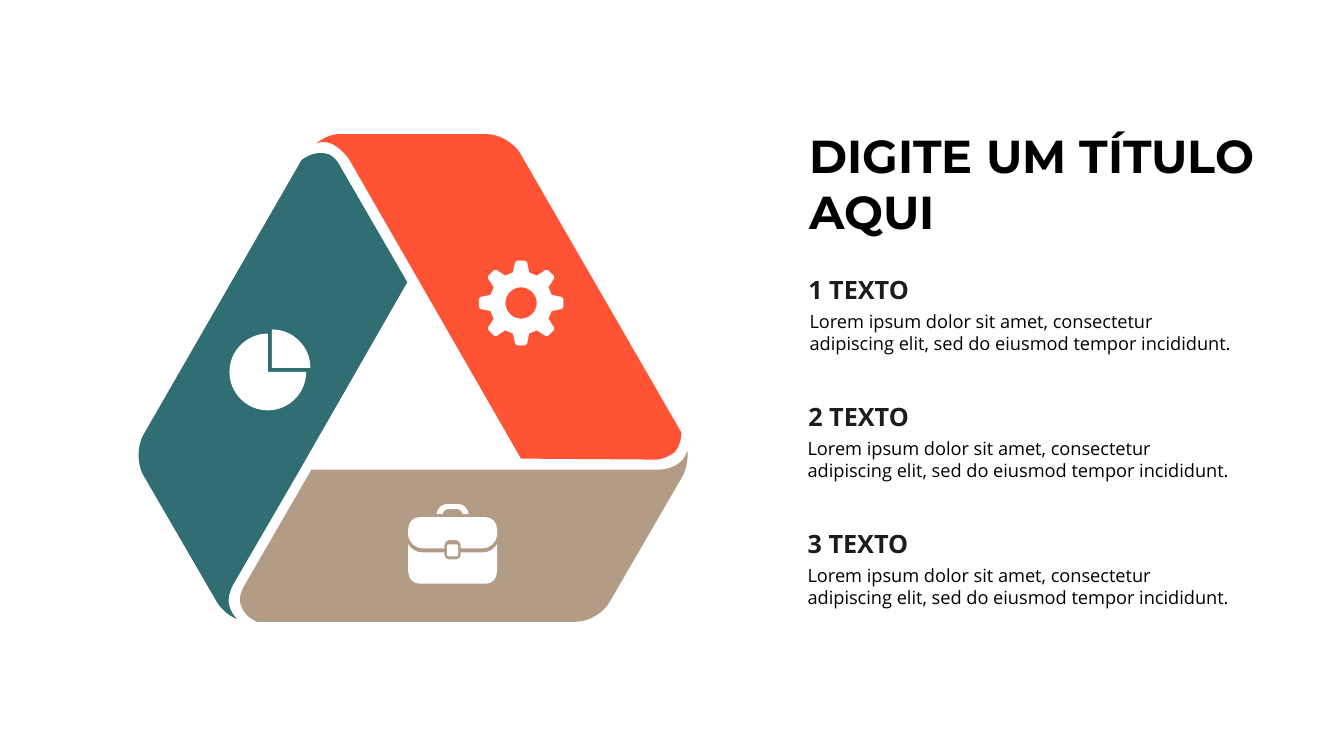
import math

import pptx
import pptx.dml.color
import pptx.enum.text
import pptx.oxml
import pptx.oxml.ns
import pptx.util

Pt = pptx.util.Pt

BODY_TEXT = ("Lorem ipsum dolor sit amet, consectetur adipiscing elit, "
             "sed do eiusmod tempor incididunt.")

# Outlines in points: (x, y) is a corner, six numbers are a Bézier curve.
BROWN_BAND = [
    (491, 321.8), (490.3, 324, 488.9, 328.3, 484.6, 331.2),
    (477.4, 336.2, 468.7, 335.5, 468.7, 335.5), (222.5, 335.5), (174.2, 419),
    (174.2, 419, 170.6, 424.8, 171.4, 429.8),
    (172.1, 433.4, 174.2, 437, 175, 437.8),
    (177.1, 441.4, 183.6, 444.2, 183.6, 444.2), (411.1, 444.2),
    (420.5, 444.2, 431.3, 437.8, 435.6, 429.8), (488.2, 339.1),
    (490.3, 334.1, 491.8, 327.6, 491, 321.8),
]
TEAL_BAND = [
    (290.9, 201.6), (242.6, 118.1),
    (242.6, 118.1, 239.8, 112.3, 234.7, 110.2),
    (233.3, 109.4, 232.6, 109.4, 231.1, 109.4), (226.8, 109.4),
    (220.3, 110.2, 215.3, 114.5, 215.3, 114.5), (102.2, 311),
    (97.9, 319, 97.9, 331.2, 102.2, 339.1), (154.8, 429.8),
    (157.7, 434.9, 163.4, 439.9, 169.2, 442.1),
    (168.5, 441.4, 164.2, 437, 163.4, 430.6),
    (162.7, 422.6, 167.8, 415.4, 167.8, 415.4), (213.8, 336.2),
]
RED_BAND = [
    (237.6, 103), (245.5, 107.3, 249.8, 114.5, 249.8, 114.5),
    (372.2, 327.6), (469.4, 328.3),
    (469.4, 328.3, 475.2, 327.6, 479.5, 324.7),
    (482.4, 323.3, 483.8, 320.4, 484.6, 319),
    (486.7, 314.6, 486.7, 308.9, 486.7, 308.9), (371.5, 109.4),
    (367.2, 102.2, 356.4, 95.8, 347.8, 95.8), (242.6, 95.8),
    (236.9, 95.8, 230.4, 98.6, 225.4, 103),
    (225.4, 102.2, 231.1, 100.1, 237.6, 103),
]

# Right halves of the briefcase parts; x is measured from its middle.
BRIEFCASE_MIDDLE = 323.3
HANDLE = [(0, 360), (4.3, 360), (7.9, 360, 11, 363.4, 11.5, 367.2),
          (7.2, 367.2), (7.2, 365.8, 5, 363.6, 3.6, 363.6), (0, 363.6)]
FLAP = [(0, 369.4), (23.8, 369.4), (28.1, 369.4, 31.7, 373, 31.7, 378),
        (31.7, 383), (31, 387.4, 26.6, 391.7, 21.6, 391.7), (5.8, 391.7),
        (5.8, 389.5), (5.8, 387.4, 4.3, 385.9, 2.9, 385.9), (0, 385.9)]
CASE = [(0, 399.6), (2.9, 399.6), (4.3, 399.6, 5.8, 398.2, 5.8, 396.7),
        (5.8, 394.6), (21.6, 394.6), (25.9, 394.6, 29.5, 392.4, 31.7, 388.8),
        (31.7, 408.2), (31.7, 413.3, 28.1, 416.9, 23.8, 416.9), (0, 416.9)]
CLASP = [(0, 388.8), (2.9, 388.8), (3.6, 388.8, 4, 389, 4, 389.5),
         (4, 396.7), (4, 397.2, 3.6, 397.4, 2.9, 397.4), (0, 397.4)]

# Upper tooth of the gear, measured from the gear's centre.
TOOTH = [(-5.8, -21.8), (-4.3, -29), (-2.9, -30.2),
         (2.9, -30.2), (4.3, -29), (5.8, -21.8)]


def color(value):
    return pptx.dml.color.RGBColor.from_string(value)


def pairs(item):
    return list(zip(item[::2], item[1::2]))


def turned(point, angle, x, y):
    """Turn a point clockwise about the origin, then move it by x and y."""
    cosine = math.cos(math.radians(angle))
    sine = math.sin(math.radians(angle))
    return (x + point[0] * cosine - point[1] * sine,
            y + point[0] * sine + point[1] * cosine)


def arc(x, y, radius, start, quarters):
    """Quarter-circle curves; degrees run clockwise from the right."""
    bend = 0.55 * radius
    outline = [turned((radius, 0), start, x, y)]
    for quarter in range(quarters):
        outline.append(sum((turned(point, start + 90 * quarter, x, y)
                            for point in [(radius, bend), (bend, radius),
                                          (0, radius)]), ()))
    return outline


def mirrored(half):
    """Complete a right half with its mirror image on the left."""
    outline = list(half) + [(-half[-1][-2], half[-1][-1])]
    for before, item in reversed(list(zip(half, half[1:]))):
        points = pairs(item)[-2::-1] + [before[-2:]]
        outline.append(sum(((-x, y) for x, y in points), ()))
    return [sum(((BRIEFCASE_MIDDLE + x, y) for x, y in pairs(item)), ())
            for item in outline]


def gear(x, y, hole_radius):
    rim = [turned(point, angle, x, y)
           for angle in range(0, 360, 45) for point in TOOTH]
    return [rim, arc(x, y, hole_radius, 0, 4)]


def pie(x, y, radius):
    return [[(x, y)] + arc(x, y, radius, 0, 3),
            [(x + 3, y - 3)] + arc(x + 3, y - 3, radius, 270, 1)]


def bend_curves(shape, contours):
    """Join the three line steps of each curve into one Bézier step."""
    qn = pptx.oxml.ns.qn
    steps = iter(list(shape.element.iter(qn("a:lnTo"))))
    for contour in contours:
        for item in contour[1:]:
            lines = [next(steps) for _ in pairs(item)]
            if len(lines) == 1:
                continue
            curve = pptx.oxml.parse_xml(
                f"<a:cubicBezTo {pptx.oxml.ns.nsdecls('a')}/>")
            lines[0].addprevious(curve)
            for line in lines:
                curve.append(line[0])
                line.getparent().remove(line)


def add_outline(slide, contours, fill):
    builder = None
    for contour in contours:
        first, *rest = [(Pt(x), Pt(y)) for item in contour
                        for x, y in pairs(item)]
        if builder is None:
            builder = slide.shapes.build_freeform(*first, scale=1.0)
        else:
            builder.move_to(*first)
        builder.add_line_segments(rest, close=True)
    shape = builder.convert_to_shape()
    bend_curves(shape, contours)
    shape.shadow.inherit = False
    shape.fill.solid()
    shape.fill.fore_color.rgb = color(fill)
    shape.line.fill.background()


def add_text(slide, text, area, size, font, ink, bold=False, insets=(0, 0),
             anchor=pptx.enum.text.MSO_ANCHOR.MIDDLE):
    box = slide.shapes.add_textbox(*[Pt(length) for length in area])
    frame = box.text_frame
    frame.word_wrap = True
    frame.vertical_anchor = anchor
    frame.margin_left = frame.margin_right = Pt(insets[0])
    frame.margin_top = frame.margin_bottom = Pt(insets[1])
    span = frame.paragraphs[0].add_run()
    span.text = text
    span.font.size = Pt(size)
    span.font.name = font
    span.font.bold = bold
    span.font.color.rgb = color(ink)


def main():
    deck = pptx.Presentation()
    deck.slide_width, deck.slide_height = Pt(960), Pt(540)
    slide = deck.slides.add_slide(deck.slide_layouts[6])

    for index, (heading_left, body_left) in enumerate(
            [(577.4, 571.2), (577.4, 569.8), (576.9, 569.8)]):
        add_text(slide, f"{index + 1} TEXTO",
                 (heading_left, 195.8 + 90.6 * index, 90, 22),
                 18, "Open Sans", "1C1C1C", bold=True)
        add_text(slide, BODY_TEXT, (body_left, 218.2 + 90.8 * index, 319, 39),
                 13, "Open Sans", "000000", insets=(7.2, 3.6),
                 anchor=pptx.enum.text.MSO_ANCHOR.TOP)

    for band, fill in [(BROWN_BAND, "B39C85"), (TEAL_BAND, "306E73"),
                       (RED_BAND, "FF5335")]:
        add_outline(slide, [band], fill)

    briefcase = [mirrored(half) for half in (HANDLE, FLAP, CASE, CLASP)]
    for icon in (briefcase, pie(191.3, 265.7, 27.4), gear(372.2, 216.4, 11.2)):
        add_outline(slide, icon, "FFFFFF")

    add_text(slide, "DIGITE UM TÍTULO AQUI", (578.2, 90.8, 381.6, 80),
             33, "Montserrat", "000000", bold=True)
    deck.save("out.pptx")


if __name__ == "__main__":
    main()
